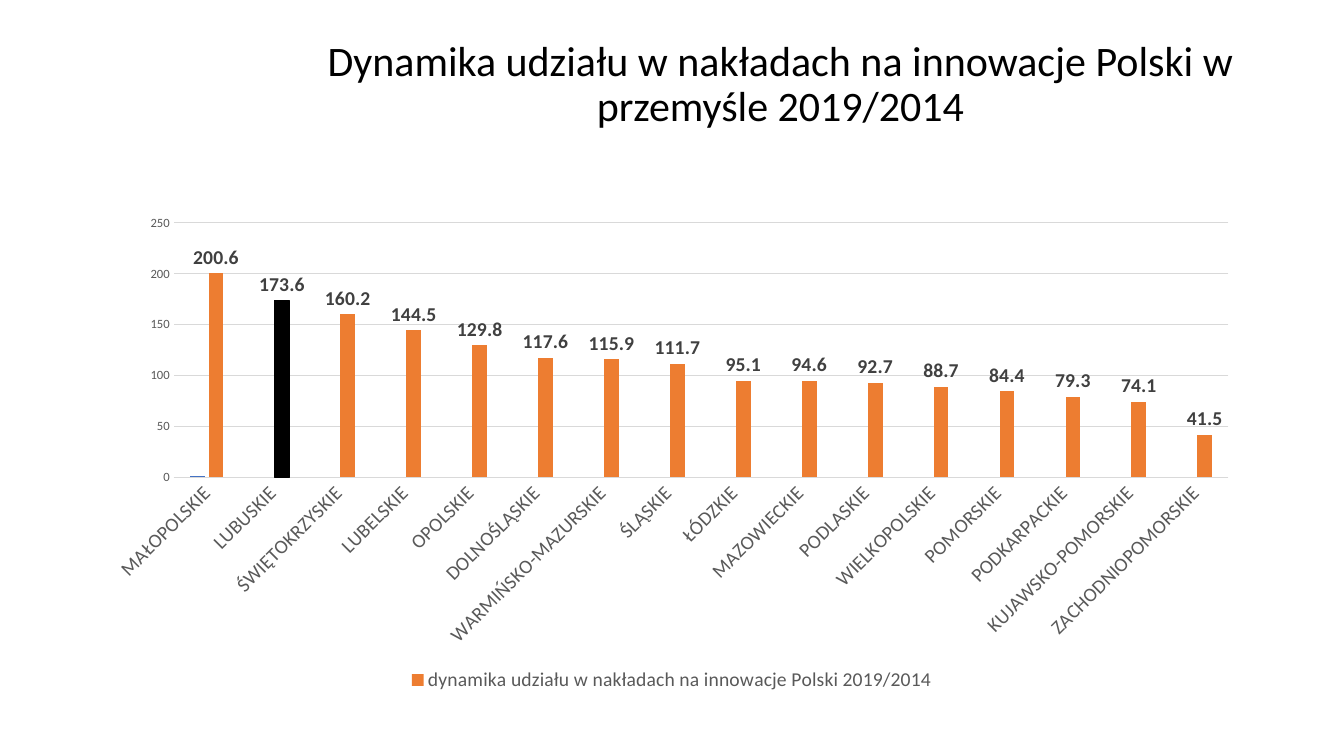
from lxml.etree import SubElement
from pptx import Presentation
from pptx.chart.data import CategoryChartData
from pptx.dml.color import RGBColor
from pptx.enum.chart import XL_CHART_TYPE, XL_LABEL_POSITION, XL_LEGEND_POSITION, XL_TICK_MARK
from pptx.enum.text import MSO_ANCHOR, PP_ALIGN
from pptx.oxml.ns import qn
from pptx.util import Emu, Pt

PX = 9525
FONT = "Calibri"
COLORS = {
    "title": "000000",
    "axis_text": "595959",
    "label": "404040",
    "grid": "D9D9D9",
    "blue": "4472C4",
    "orange": "ED7D31",
    "highlight": "000000",
}
TITLE = "Dynamika udziału w nakładach na innowacje Polski w przemyśle 2019/2014"
SERIES_NAME = "dynamika udziału w nakładach na innowacje Polski 2019/2014"
DYNAMICS = {
    "MAŁOPOLSKIE": 200.6,
    "LUBUSKIE": 173.6,
    "ŚWIĘTOKRZYSKIE": 160.2,
    "LUBELSKIE": 144.5,
    "OPOLSKIE": 129.8,
    "DOLNOŚLĄSKIE": 117.6,
    "WARMIŃSKO-MAZURSKIE": 115.9,
    "ŚLĄSKIE": 111.7,
    "ŁÓDZKIE": 95.1,
    "MAZOWIECKIE": 94.6,
    "PODLASKIE": 92.7,
    "WIELKOPOLSKIE": 88.7,
    "POMORSKIE": 84.4,
    "PODKARPACKIE": 79.3,
    "KUJAWSKO-POMORSKIE": 74.1,
    "ZACHODNIOPOMORSKIE": 41.5,
}
HIGHLIGHTED = "LUBUSKIE"


def px(*lengths):
    return [Emu(length * PX) for length in lengths]


def rgb(name):
    return RGBColor.from_string(COLORS[name])


def style_font(font, size, color, bold=False):
    font.name = FONT
    font.size = Pt(size)
    font.bold = bold
    font.color.rgb = rgb(color)


def style_line(line, color):
    line.color.rgb = rgb(color)
    line.width = Pt(0.75)


def fill_solid(fill, color):
    fill.solid()
    fill.fore_color.rgb = rgb(color)


def add_title(slide):
    frame = slide.shapes.add_textbox(*px(294, 31, 899, 98)).text_frame
    frame.word_wrap = True
    frame.vertical_anchor = MSO_ANCHOR.BOTTOM
    heading = frame.paragraphs[0]
    heading.text = TITLE
    heading.alignment = PP_ALIGN.CENTER
    heading.line_spacing = 0.9
    style_font(heading.font, 30, "title")


def style_axes(chart):
    regions, scale = chart.category_axis, chart.value_axis
    for axis, size in ((regions, 14), (scale, 9)):
        axis.major_tick_mark = axis.minor_tick_mark = XL_TICK_MARK.NONE
        style_font(axis.tick_labels.font, size, "axis_text")
    style_line(regions.format.line, "grid")
    regions._element.txPr.find(qn("a:bodyPr")).set("rot", "-2700000")
    scale.minimum_scale, scale.maximum_scale, scale.major_unit = 0, 250, 50
    scale.format.line.fill.background()
    style_line(scale.major_gridlines.format.line, "grid")


def add_legend(chart, hidden_entry):
    chart.has_legend = True
    legend = chart.legend
    legend.position = XL_LEGEND_POSITION.BOTTOM
    legend.include_in_layout = False
    style_font(legend.font, 14, "axis_text")
    entry = SubElement(legend._element, qn("c:legendEntry"))
    SubElement(entry, qn("c:idx")).set("val", str(hidden_entry))
    SubElement(entry, qn("c:delete")).set("val", "1")
    legend._element.find(qn("c:legendPos")).addnext(entry)


def label_values(series):
    labels = series.data_labels
    labels.show_value = True
    labels.number_format = "0.0"
    labels.number_format_is_linked = False
    labels.position = XL_LABEL_POSITION.OUTSIDE_END
    style_font(labels.font, 14, "label", bold=True)


def add_dynamics_chart(slide):
    regions = list(DYNAMICS)
    data = CategoryChartData()
    data.categories = regions
    data.add_series("Series 1", [1] + [None] * (len(regions) - 1))
    data.add_series(SERIES_NAME, DYNAMICS.values())
    chart = slide.shapes.add_chart(
        XL_CHART_TYPE.COLUMN_CLUSTERED, *px(88, 196, 1104, 467), data
    ).chart
    chart.has_title = False
    style_font(chart.font, 10, "title")

    plot = chart.plots[0]
    plot.gap_width, plot.overlap = 219, -27
    plot.vary_by_categories = False
    for series, color in zip(plot.series, ("blue", "orange")):
        fill_solid(series.format.fill, color)
    dynamics = plot.series[1]
    highlight = dynamics.points[regions.index(HIGHLIGHTED)].format
    fill_solid(highlight.fill, "highlight")
    style_line(highlight.line, "highlight")
    label_values(dynamics)
    style_axes(chart)
    add_legend(chart, hidden_entry=0)


def main():
    deck = Presentation()
    deck.slide_width, deck.slide_height = px(1280, 720)
    slide = deck.slides.add_slide(deck.slide_layouts[6])
    add_title(slide)
    add_dynamics_chart(slide)
    deck.save("out.pptx")


if __name__ == "__main__":
    main()
